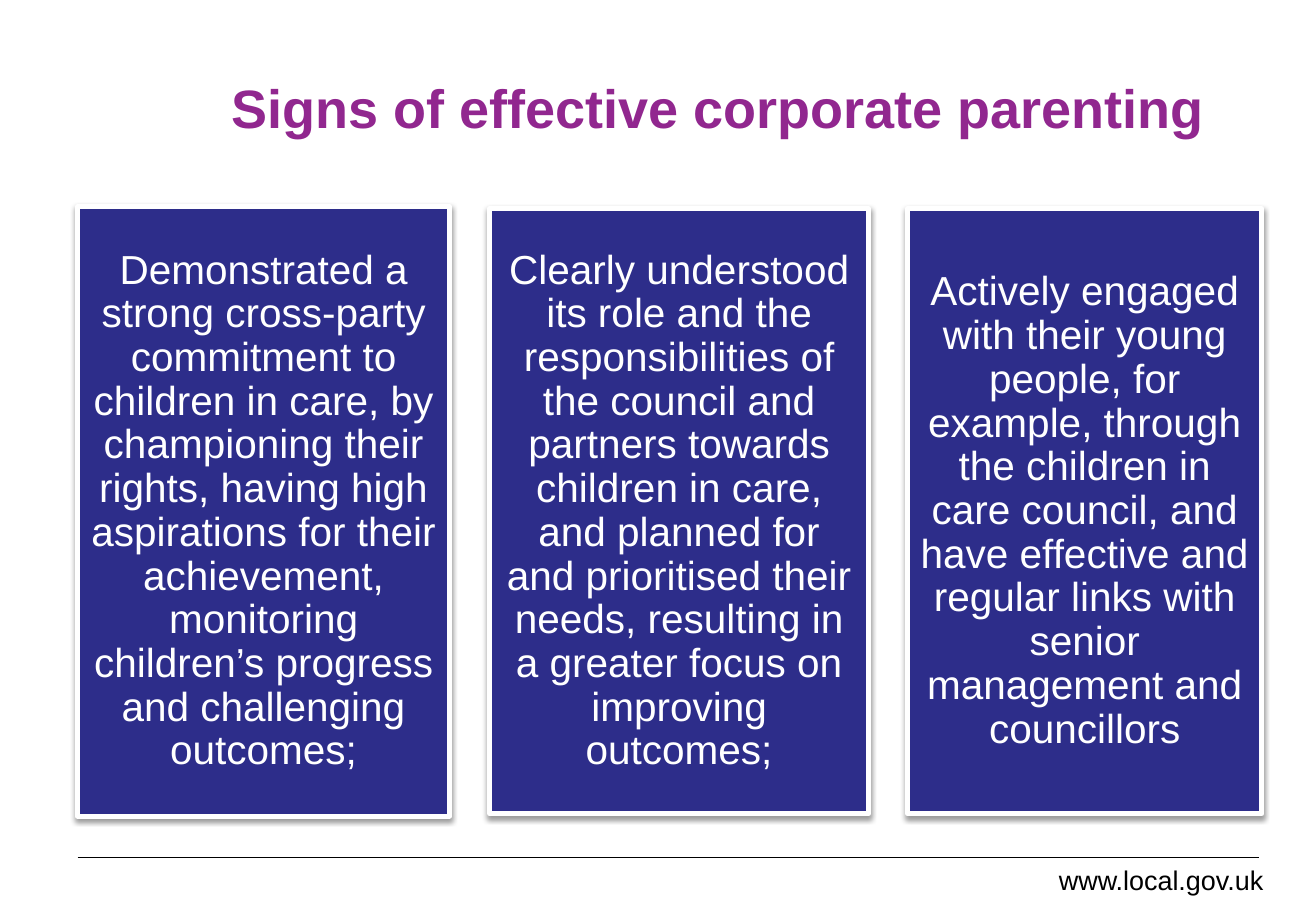
from lxml import etree
from pptx import Presentation
from pptx.dml.color import RGBColor
from pptx.enum import shapes, text
from pptx.oxml import ns
from pptx.util import Pt

BLACK = RGBColor(0x00, 0x00, 0x00)
WHITE = RGBColor(0xFF, 0xFF, 0xFF)
PURPLE = RGBColor(0x91, 0x27, 0x8F)
NAVY = RGBColor(0x2D, 0x2D, 0x8A)

SIGNS = [
    (46, 122.4, 220.4, 361.4,
     "Demonstrated a strong cross-party commitment to children in care, "
     "by championing their rights, having high aspirations for their "
     "achievement, monitoring children’s progress and challenging outcomes;"),
    (290.2, 123.8, 224.6, 358.6,
     "Clearly understood its role and the responsibilities of the council "
     "and partners towards children in care, and planned for and prioritised "
     "their needs, resulting in a greater focus on improving outcomes;"),
    (537.8, 123.8, 210.2, 358.6,
     "Actively engaged with their young people, for example, through the "
     "children in care council, and have effective and regular links with "
     "senior management and councillors"),
]


def write(shape, words, size, color, bold=False, align=text.PP_ALIGN.LEFT,
          anchor=text.MSO_ANCHOR.MIDDLE, lines=0.9, pad=3.6):
    frame = shape.text_frame
    frame.word_wrap = True
    frame.auto_size = text.MSO_AUTO_SIZE.NONE
    frame.vertical_anchor = anchor
    frame.margin_left = frame.margin_right = Pt(7.2)
    frame.margin_top = frame.margin_bottom = Pt(pad)
    para = frame.paragraphs[0]
    para.alignment = align
    para.line_spacing = lines
    run = para.add_run()
    run.text = words
    font = run.font
    font.name = "Arial"
    font.size = Pt(size)
    font.bold = bold
    font.color.rgb = color


def effects(shape):
    """Add an empty effect list, which turns off the theme shadow."""
    return etree.SubElement(shape._element.spPr, ns.qn("a:effectLst"))


def shade(shape):
    """Cast a soft shadow straight down."""
    cast = etree.SubElement(effects(shape), ns.qn("a:outerShdw"),
                            blurRad=str(Pt(3.1)), dist=str(Pt(1.6)),
                            dir="5400000", rotWithShape="0")
    tint = etree.SubElement(cast, ns.qn("a:srgbClr"), val=str(BLACK))
    etree.SubElement(tint, ns.qn("a:alpha"), val="38000")


def add_title(slide, x, y, w, h):
    title = slide.shapes.title
    title.left, title.top, title.width, title.height = map(Pt, (x, y, w, h))
    write(title, "Signs of effective corporate parenting", 32, PURPLE,
          bold=True)


def add_card(slide, x, y, w, h, words):
    card = slide.shapes.add_shape(shapes.MSO_SHAPE.RECTANGLE,
                                  Pt(x), Pt(y), Pt(w), Pt(h))
    card.fill.solid()
    card.fill.fore_color.rgb = NAVY
    card.line.color.rgb = WHITE
    card.line.width = Pt(3)
    shade(card)
    write(card, words, 24, WHITE, align=text.PP_ALIGN.CENTER, pad=7.2)


def add_footer(slide, x, y, w, h):
    rule = slide.shapes.add_connector(shapes.MSO_CONNECTOR.STRAIGHT,
                                      Pt(x), Pt(y), Pt(x + w - 10), Pt(y))
    rule.line.color.rgb = BLACK
    rule.line.width = Pt(0.75)
    effects(rule)
    site = slide.shapes.add_textbox(Pt(x + w - 139), Pt(y), Pt(139), Pt(h))
    write(site, "www.local.gov.uk", 16, BLACK, align=text.PP_ALIGN.RIGHT,
          anchor=text.MSO_ANCHOR.TOP, lines=1.0)


def main():
    deck = Presentation()
    deck.slide_width, deck.slide_height = Pt(780), Pt(540)
    slide = deck.slides.add_slide(deck.slide_layouts[5])
    add_footer(slide, 46, 508.3, 710, 26.6)
    add_title(slide, 130.3, 43.2, 702, 45.4)
    for sign in SIGNS:
        add_card(slide, *sign)
    deck.save("out.pptx")


if __name__ == "__main__":
    main()
